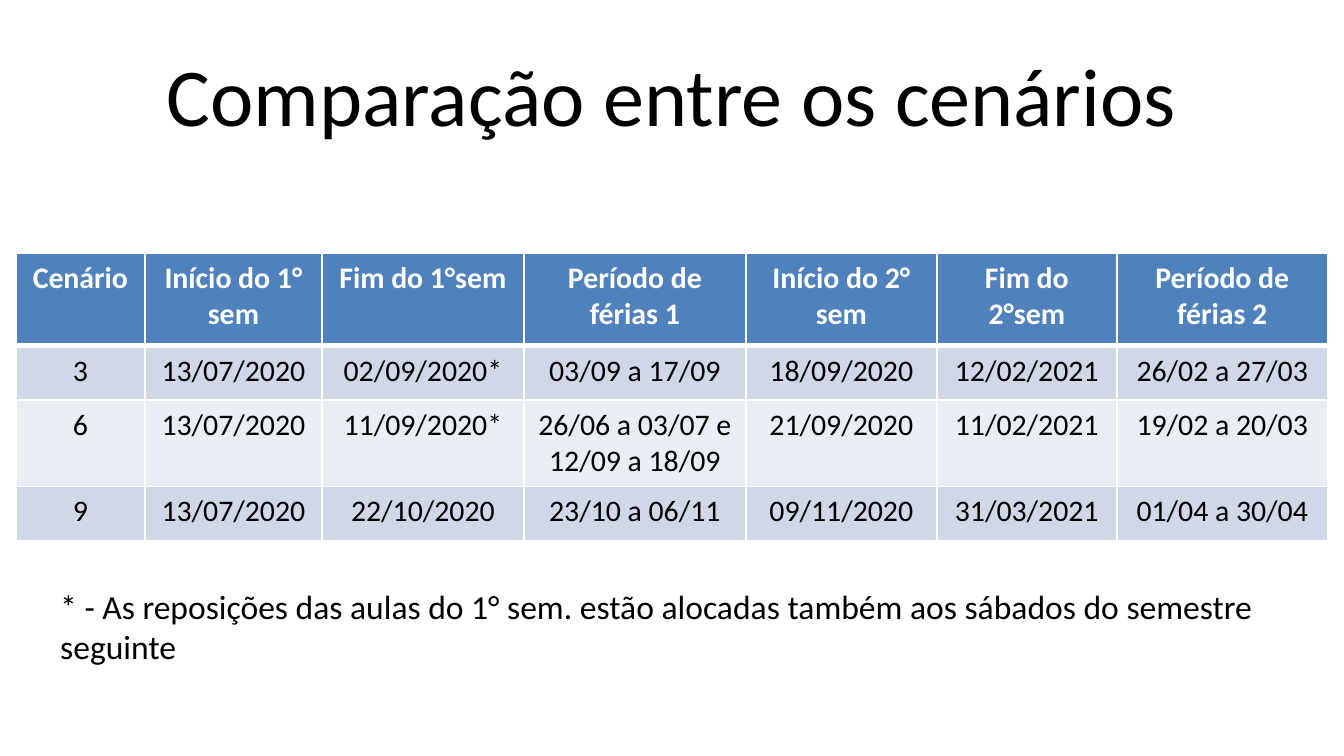
from dataclasses import dataclass

from lxml.etree import SubElement
from pptx import Presentation
from pptx.dml.color import RGBColor
from pptx.enum.text import MSO_ANCHOR as Anchor, PP_ALIGN as Align
from pptx.oxml.ns import qn
from pptx.util import Pt

EMU_PER_PX = 914400 / 134.4


@dataclass(frozen=True)
class Theme:
    font: str = "Calibri"
    text: str = "000000"
    inverse: str = "FFFFFF"
    header: str = "4F81BD"
    bands: tuple[str, ...] = ("D0D8E8", "E9EDF4")
    title_size: int = 44
    table_size: int = 16
    note_size: int = 18
    border: int = 1
    header_border: int = 3


@dataclass(frozen=True)
class Box:
    left: int
    top: int
    width: int
    height: int

    def emu(self) -> tuple[int, ...]:
        return tuple(px(n) for n in (self.left, self.top, self.width, self.height))


@dataclass(frozen=True)
class Column:
    heading: str
    width: int
    values: tuple[str, ...]


THEME = Theme()
TITLE_BOX = Box(67, 31, 1210, 126)
TABLE_BOX = Box(16, 253, 1312, 284)
NOTE_BOX = Box(47, 579, 1249, 95)
ROW_HEIGHTS = (93, 54, 54, 54)
COLUMNS = (
    Column("Cenário", 129, ("3", "6", "9")),
    Column("Início do 1° sem", 177, ("13/07/2020",) * 3),
    Column("Fim do 1°sem", 202, ("02/09/2020*", "11/09/2020*", "22/10/2020")),
    Column("Período de férias 1", 222,
           ("03/09 a 17/09", "26/06 a 03/07 e\n12/09 a 18/09", "23/10 a 06/11")),
    Column("Início do 2° sem", 191, ("18/09/2020", "21/09/2020", "09/11/2020")),
    Column("Fim do 2°sem", 180, ("12/02/2021", "11/02/2021", "31/03/2021")),
    Column("Período de férias 2", 211,
           ("26/02 a 27/03", "19/02 a 20/03", "01/04 a 30/04")),
)


def px(length: int) -> int:
    """Turn pixels into EMU."""
    return round(length * EMU_PER_PX)


def write(frame, text: str, *, size: int, color: str = THEME.text,
          bold: bool = False, align=Align.LEFT) -> None:
    """Fill a text frame, one paragraph for each line of the text."""
    frame.word_wrap = True
    frame.text = text
    for paragraph in frame.paragraphs:
        paragraph.alignment = align
        for run in paragraph.runs:
            run.font.name = THEME.font
            run.font.size = Pt(size)
            run.font.bold = bold
            run.font.color.rgb = RGBColor.from_string(color)


def set_borders(cell, *, top: int, bottom: int) -> None:
    """Give a cell white borders, with widths in points."""
    properties = cell._tc.get_or_add_tcPr()
    widths = {"lnL": THEME.border, "lnR": THEME.border, "lnT": top, "lnB": bottom}
    for name, width in widths.items():
        line = SubElement(properties, qn(f"a:{name}"), w=str(Pt(width)))
        fill = SubElement(line, qn("a:solidFill"))
        SubElement(fill, qn("a:srgbClr"), val=THEME.inverse)


def draw_cell(cell, text: str, row: int) -> None:
    """Format one cell as a heading or as part of a banded row."""
    is_header = row == 0
    set_borders(cell,
                top=THEME.header_border if row == 1 else THEME.border,
                bottom=THEME.header_border if is_header else THEME.border)
    color = THEME.header if is_header else THEME.bands[(row - 1) % len(THEME.bands)]
    cell.fill.solid()
    cell.fill.fore_color.rgb = RGBColor.from_string(color)
    write(cell.text_frame, text, size=THEME.table_size, bold=is_header,
          color=THEME.inverse if is_header else THEME.text, align=Align.CENTER)


def draw_table(slide, box: Box, columns: tuple[Column, ...]) -> None:
    """Draw the table of scenarios."""
    table = slide.shapes.add_table(len(ROW_HEIGHTS), len(columns), *box.emu()).table
    for row, height in zip(table.rows, ROW_HEIGHTS):
        row.height = px(height)
    for index, column in enumerate(columns):
        table.columns[index].width = px(column.width)
        for row, text in enumerate((column.heading, *column.values)):
            draw_cell(table.cell(row, index), text, row)


def draw_title(slide, box: Box, text: str) -> None:
    """Place and fill the title placeholder."""
    title = slide.shapes.title
    title.left, title.top, title.width, title.height = box.emu()
    title.text_frame.vertical_anchor = Anchor.MIDDLE
    write(title.text_frame, text, size=THEME.title_size, align=Align.CENTER)


def main() -> None:
    """Build and save the presentation."""
    presentation = Presentation()
    presentation.slide_width, presentation.slide_height = px(1344), px(756)
    slide = presentation.slides.add_slide(presentation.slide_layouts[5])
    draw_title(slide, TITLE_BOX, "Comparação entre os cenários")
    draw_table(slide, TABLE_BOX, COLUMNS)
    note = slide.shapes.add_textbox(*NOTE_BOX.emu())
    write(note.text_frame,
          "* - As reposições das aulas do 1° sem. estão alocadas também "
          "aos sábados do semestre seguinte", size=THEME.note_size)
    presentation.save("out.pptx")


if __name__ == "__main__":
    main()
